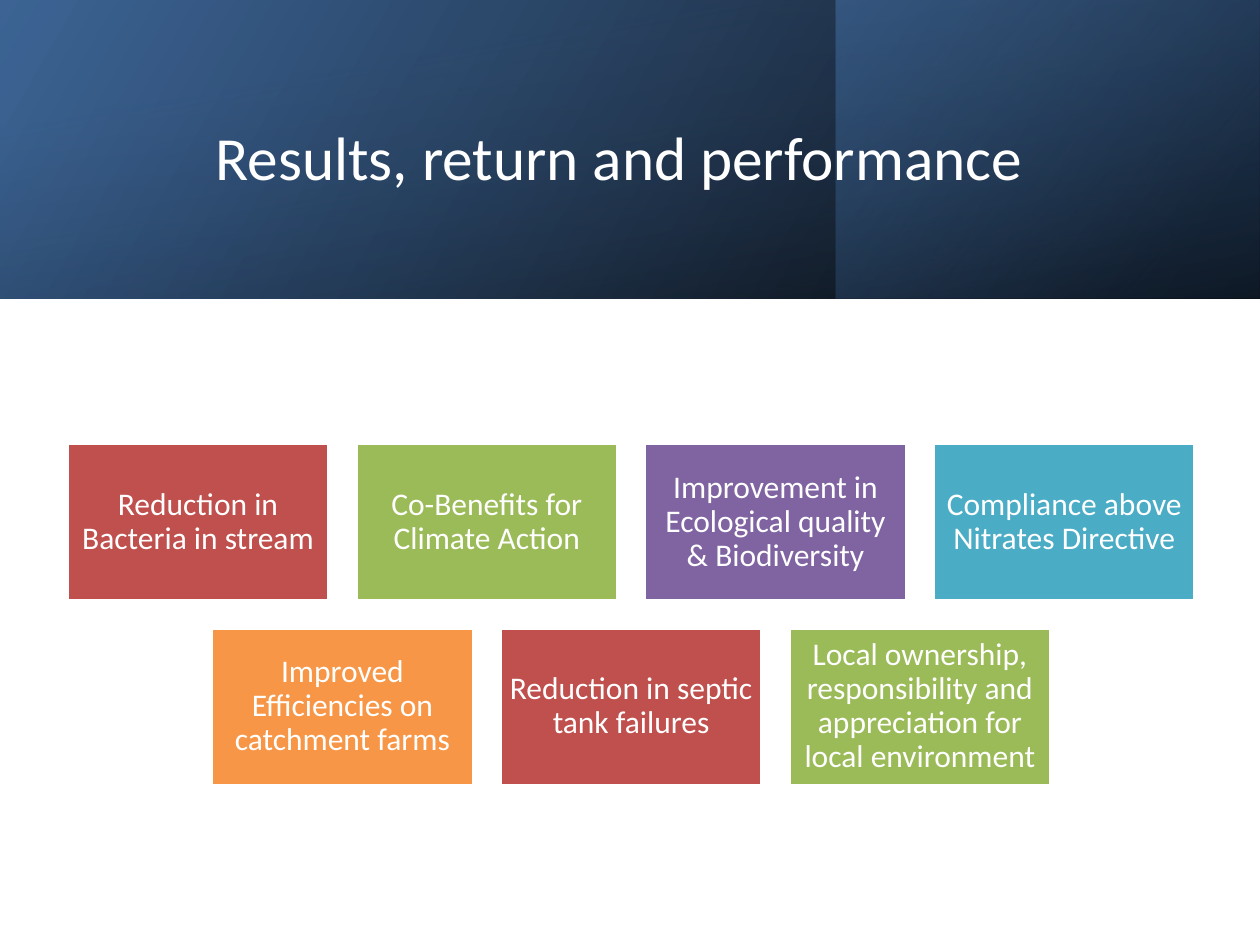
from lxml import etree
from pptx import Presentation
from pptx.dml.color import RGBColor
from pptx.enum.shapes import MSO_SHAPE
from pptx.enum.text import MSO_ANCHOR, PP_ALIGN
from pptx.oxml.ns import qn
from pptx.util import Pt

RECT = MSO_SHAPE.RECTANGLE
MIDDLE = MSO_ANCHOR.MIDDLE
CENTER = PP_ALIGN.CENTER

WHITE = "FFFFFF"
RED, GREEN, PURPLE, TEAL, ORANGE = "C0504D", "9BBB59", "8064A2", "4BACC6", "F79646"

TITLE = "Results, return and performance"
ROWS = [
    [("Reduction in Bacteria in stream", RED),
     ("Co-Benefits for Climate Action", GREEN),
     ("Improvement in Ecological quality & Biodiversity", PURPLE),
     ("Compliance above Nitrates Directive", TEAL)],
    [("Improved Efficiencies on catchment farms", ORANGE),
     ("Reduction in septic tank failures", RED),
     ("Local ownership, responsibility and appreciation for local environment", GREEN)],
]

# Header layers: left, width, clockwise angle, stops of (position, colour, opacity %)
BAND = 170.6
LAYERS = [
    (0, 720, 30, [(0, "376092", 96), (1, "000000", 96)]),
    (477.5, 242, 40, [(0, "4F81BD", 48), (0.81, "254061", 68)]),
    (0, 720, 80, [(0.23, "376092", 16), (0.99, "000000", 45)]),
]

TILE_W, TILE_H, GAP = 149.6, 90, 15.4
MID, TOP = 360.7, 253.4


def color(code):
    return RGBColor.from_string(code)


def add_rect(slide, *box):
    shape = slide.shapes.add_shape(RECT, *map(Pt, box))
    shape.shadow.inherit = False
    return shape


def add_layer(slide, left, width, angle, stops):
    shape = add_rect(slide, left, 0, width, BAND)
    shape.line.fill.background()
    shape.fill.gradient()
    shape.fill.gradient_angle = 360 - angle
    for stop, (pos, code, alpha) in zip(shape.fill.gradient_stops, stops):
        stop.position = pos
        stop.color.rgb = color(code)
    for node, (_, _, alpha) in zip(shape.fill._xPr.iter(qn("a:srgbClr")), stops):
        etree.SubElement(node, qn("a:alpha"), val=str(alpha * 1000))


def write(shape, text, size, inset, spacing=1.0):
    frame = shape.text_frame
    look = {"word_wrap": True, "vertical_anchor": MIDDLE}
    look.update({f"margin_{side}": Pt(inset)
                 for side in ("left", "right", "top", "bottom")})
    para = frame.paragraphs[0]
    run = para.add_run()
    run.text = text
    formats = [
        (frame, look),
        (para, {"alignment": CENTER, "line_spacing": spacing}),
        (run.font, {"name": "Calibri", "size": Pt(size)}),
    ]
    for target, values in formats:
        for name, value in values.items():
            setattr(target, name, value)
    run.font.color.rgb = color(WHITE)


def add_tile(slide, left, top, text, code):
    tile = add_rect(slide, left, top, TILE_W, TILE_H)
    tile.fill.solid()
    tile.fill.fore_color.rgb = color(code)
    tile.line.color.rgb = color(WHITE)
    tile.line.width = Pt(2)
    write(tile, text, 18, 5, 0.9)


def main():
    deck = Presentation()
    deck.slide_width, deck.slide_height = Pt(720), Pt(540)
    slide = deck.slides.add_slide(deck.slide_layouts[6])

    for layer in LAYERS:
        add_layer(slide, *layer)
    title = slide.shapes.add_textbox(Pt(81), Pt(27.4), Pt(546), Pt(124))
    write(title, TITLE, 35, 4)

    for r, row in enumerate(ROWS):
        start = MID - (len(row) * (TILE_W + GAP) - GAP) / 2
        for c, (text, code) in enumerate(row):
            add_tile(slide, start + c * (TILE_W + GAP),
                     TOP + r * (TILE_H + GAP), text, code)

    deck.save("out.pptx")


if __name__ == "__main__":
    main()
